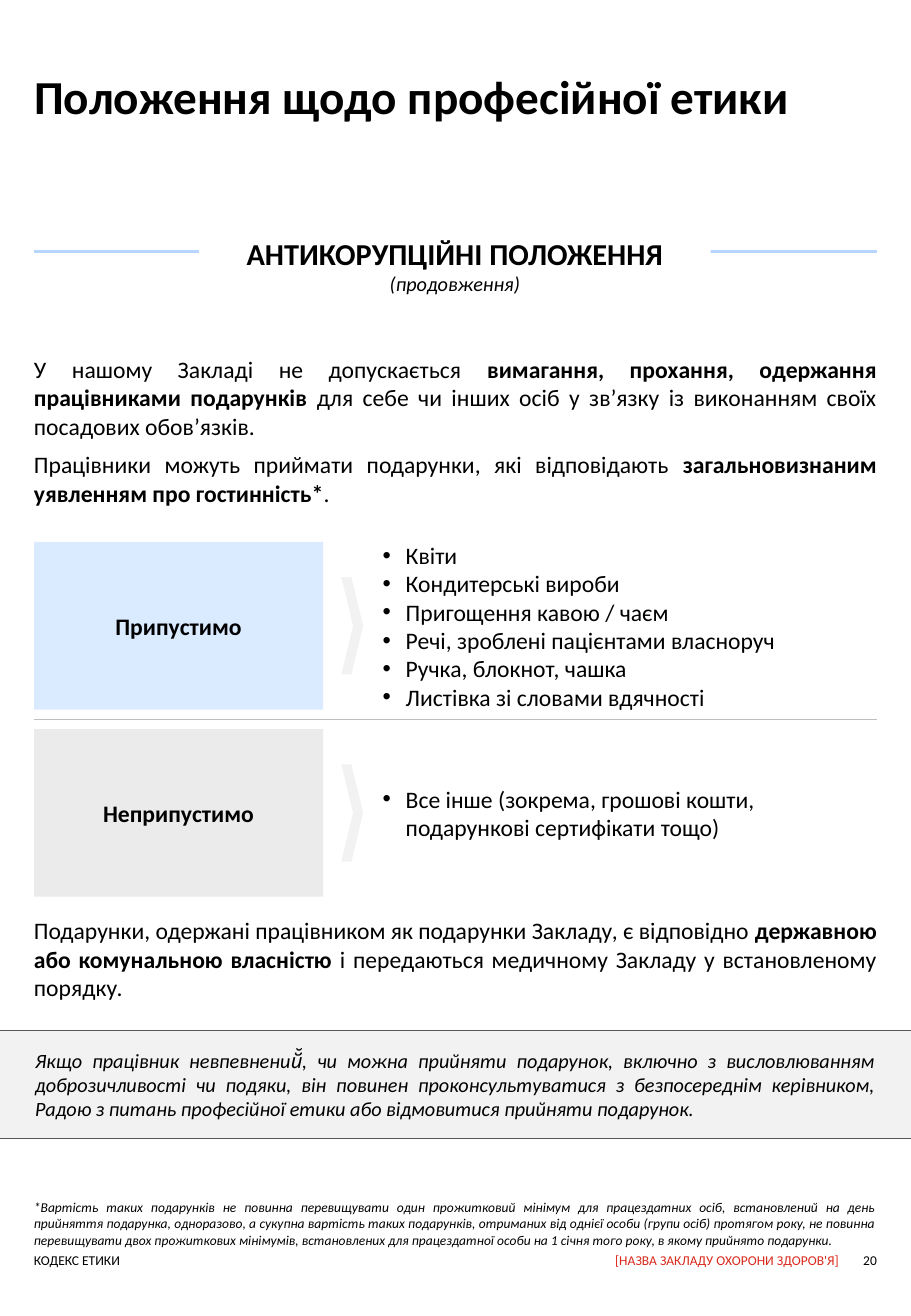
from dataclasses import dataclass

from lxml import etree
from pptx import Presentation
from pptx.dml.color import RGBColor
from pptx.enum import shapes, text
from pptx.oxml.ns import qn
from pptx.util import Inches, Pt


@dataclass(frozen=True)
class Theme:
    font: str = "Calibri"
    ink: str = "000000"
    red: str = "DA291C"
    blue: str = "B7D6FF"
    gray: str = "D9D9D9"
    pale: str = "F2F2F2"
    divider: str = "BFBFBF"
    band_edge: str = "53565A"
    title: int = 28
    heading: int = 18
    body: int = 14
    remark: int = 12
    small: int = 8


THEME = Theme()
ALIGN = text.PP_ALIGN
ANCHOR = text.MSO_ANCHOR

# Paragraphs are lists of (words, bold) pairs.
TITLE = "Положення щодо професійної етики"
HEADING = "АНТИКОРУПЦІЙНІ ПОЛОЖЕННЯ"
CONTINUED = "(продовження)"
INTRO = [
    [("У нашому Закладі не допускається ", False),
     ("вимагання, прохання, одержання працівниками подарунків ", True),
     ("для себе чи інших осіб у зв’язку із виконанням своїх посадових обов’язків.", False)],
    [("Працівники можуть приймати подарунки, які відповідають ", False),
     ("загальновизнаним уявленням про гостинність*", True),
     (".", False)],
]
RULES = [
    ("Припустимо", THEME.blue,
     ["Квіти", "Кондитерські вироби", "Пригощення кавою / чаєм",
      "Речі, зроблені пацієнтами власноруч", "Ручка, блокнот, чашка",
      "Листівка зі словами вдячності"]),
    ("Неприпустимо", THEME.gray,
     ["Все інше (зокрема, грошові кошти, подарункові сертифікати тощо)"]),
]
OWNERSHIP = [
    [("Подарунки, одержані працівником як подарунки Закладу, є відповідно ", False),
     ("державною або комунальною власністю", True),
     (" і передаються медичному Закладу у встановленому порядку.", False)],
]
ADVICE = ("Якщо працівник невпевнений̆, чи можна прийняти подарунок, включно з висловлюванням "
          "доброзичливості чи подяки, він повинен проконсультуватися з безпосереднім керівником, "
          "Радою з питань професійної етики або відмовитися прийняти подарунок.")
FOOTNOTE = ("*Вартість таких подарунків не повинна перевищувати один прожитковий мінімум для "
            "працездатних осіб, встановлений на день прийняття подарунка, одноразово, а сукупна "
            "вартість таких подарунків, отриманих від однієї особи (групи осіб) протягом року, не "
            "повинна перевищувати двох прожиткових мінімумів, встановлених для працездатної особи "
            "на 1 січня того року, в якому прийнято подарунки.")
FOOTER = [
    ("КОДЕКС ЕТИКИ", 0.28, 3.5, ALIGN.LEFT, THEME.ink),
    ("[НАЗВА ЗАКЛАДУ ОХОРОНИ ЗДОРОВ'Я]", 3.9, 3.01, ALIGN.RIGHT, THEME.red),
    ("20", 7.03, 0.19, ALIGN.RIGHT, THEME.ink),
]

PAGE_W, PAGE_H = 7.5, 10.83
MARGIN = 0.28
CONTENT_W = PAGE_W - 2 * MARGIN
RULES_TOP, RULE_H, RULE_STEP = 4.46, 1.38, 1.54
LABEL_W = 2.38
CHEVRON_X, CHEVRON_W, CHEVRON_H = 2.81, 0.18, 0.8
LIST_X = 3.15
BULLET_INDENT = 0.19
BLEED = 0.89


def rgb(color):
    return RGBColor.from_string(color)


def style(paragraph, size, align=ALIGN.LEFT, color=THEME.ink, bold=None, italic=None, after=0):
    paragraph.alignment = align
    paragraph.space_before = Pt(0)
    paragraph.space_after = Pt(after)
    font = paragraph.font
    font.name, font.size, font.bold, font.italic = THEME.font, Pt(size), bold, italic
    font.color.rgb = rgb(color)


def set_frame(frame, anchor=ANCHOR.TOP, side=0, edge=0):
    frame.word_wrap = True
    frame.auto_size = text.MSO_AUTO_SIZE.NONE
    frame.vertical_anchor = anchor
    frame.margin_left = frame.margin_right = Inches(side)
    frame.margin_top = frame.margin_bottom = Inches(edge)
    return frame


def place(part, x, y, w, h):
    part.left, part.top, part.width, part.height = map(Inches, (x, y, w, h))


def write(frame, words, size, **look):
    frame.text = words
    style(frame.paragraphs[0], size, **look)


def add_box(slide, x, y, w, h):
    return set_frame(slide.shapes.add_textbox(*map(Inches, (x, y, w, h))).text_frame)


def add_rich_text(slide, y, h, paragraphs, after=0):
    frame = add_box(slide, MARGIN, y, CONTENT_W, h)
    for i, pieces in enumerate(paragraphs):
        paragraph = frame.paragraphs[0] if i == 0 else frame.add_paragraph()
        for words, bold in pieces:
            run = paragraph.add_run()
            run.text = words
            run.font.bold = bold
        style(paragraph, THEME.body, align=ALIGN.JUSTIFY, after=after)


def add_panel(slide, kind, x, y, w, h, fill, edge=None):
    panel = slide.shapes.add_shape(kind, *map(Inches, (x, y, w, h)))
    panel.shadow.inherit = False
    panel.fill.solid()
    panel.fill.fore_color.rgb = rgb(fill)
    if edge:
        panel.line.color.rgb = rgb(edge)
        panel.line.width = Pt(0.75)
    else:
        panel.line.fill.background()
    return panel


def add_rule(slide, y, color, width):
    rule = slide.shapes.add_connector(
        shapes.MSO_CONNECTOR.STRAIGHT,
        *map(Inches, (MARGIN, y, PAGE_W - MARGIN, y)))
    rule.line.color.rgb = rgb(color)
    rule.line.width = Pt(width)
    etree.SubElement(rule._element.spPr, qn("a:effectLst"))


def fill_list(frame, items):
    for i, item in enumerate(items):
        paragraph = frame.paragraphs[0] if i == 0 else frame.add_paragraph()
        paragraph.text = item
        properties = paragraph._p.get_or_add_pPr()
        properties.set("marL", str(Inches(BULLET_INDENT)))
        properties.set("indent", str(-Inches(BULLET_INDENT)))
        etree.SubElement(properties, qn("a:buFont"), typeface="Arial")
        etree.SubElement(properties, qn("a:buChar"), char="•")
        style(paragraph, THEME.body)


def add_gift_rule(slide, y, label, color, items, gift_list):
    tile = add_panel(slide, shapes.MSO_SHAPE.RECTANGLE, MARGIN, y, LABEL_W, RULE_H, color)
    tint = tile.fill._xPr.find(qn("a:solidFill"))[0]
    etree.SubElement(tint, qn("a:alpha"), val="50000")
    write(set_frame(tile.text_frame, ANCHOR.MIDDLE, 0.04, 0.04), label, THEME.body,
          align=ALIGN.CENTER, bold=True, after=6)
    chevron = add_panel(slide, shapes.MSO_SHAPE.CHEVRON, CHEVRON_X,
                        y + (RULE_H - CHEVRON_H) / 2, CHEVRON_W, CHEVRON_H, THEME.pale)
    chevron.adjustments[0] = 0.54
    place(gift_list, LIST_X, y, PAGE_W - MARGIN - LIST_X, RULE_H)
    fill_list(set_frame(gift_list.text_frame, ANCHOR.MIDDLE), items)


def main():
    deck = Presentation()
    deck.slide_width, deck.slide_height = Inches(PAGE_W), Inches(PAGE_H)
    slide = deck.slides.add_slide(deck.slide_layouts.get_by_name("Two Content"))
    title, *gift_lists = slide.placeholders

    place(title, MARGIN, 0.55, CONTENT_W, 0.53)
    write(set_frame(title.text_frame), TITLE, THEME.title, bold=True)

    add_rule(slide, 2.07, THEME.blue, 2.25)
    heading = add_panel(slide, shapes.MSO_SHAPE.RECTANGLE, 1.64, 1.85, 4.21, 0.67, "FFFFFF")
    frame = set_frame(heading.text_frame, ANCHOR.MIDDLE)
    write(frame, HEADING, THEME.heading, align=ALIGN.CENTER, bold=True)
    continued = frame.add_paragraph()
    continued.text = CONTINUED
    style(continued, THEME.remark, align=ALIGN.CENTER, italic=True)

    add_rich_text(slide, 2.92, 1.31, INTRO, after=6)
    for i, (rule, gift_list) in enumerate(zip(RULES, gift_lists)):
        add_gift_rule(slide, RULES_TOP + i * RULE_STEP, *rule, gift_list)
    add_rule(slide, RULES_TOP + (RULE_H + RULE_STEP) / 2, THEME.divider, 0.75)
    add_rich_text(slide, 7.54, 0.79, OWNERSHIP)

    band = add_panel(slide, shapes.MSO_SHAPE.RECTANGLE, -BLEED, 8.48,
                     PAGE_W + 2 * BLEED, 0.89, THEME.pale, THEME.band_edge)
    write(set_frame(band.text_frame, ANCHOR.MIDDLE, BLEED + 0.29, 0.04), ADVICE, THEME.remark,
          align=ALIGN.JUSTIFY, italic=True, after=6)
    write(add_box(slide, MARGIN, 9.87, CONTENT_W, 0.4), FOOTNOTE, THEME.small,
          align=ALIGN.JUSTIFY, italic=True, after=6)
    for words, x, w, align, color in FOOTER:
        write(add_box(slide, x, 10.3, w, 0.13), words, THEME.small, align=align, color=color)

    deck.save("out.pptx")


if __name__ == "__main__":
    main()
